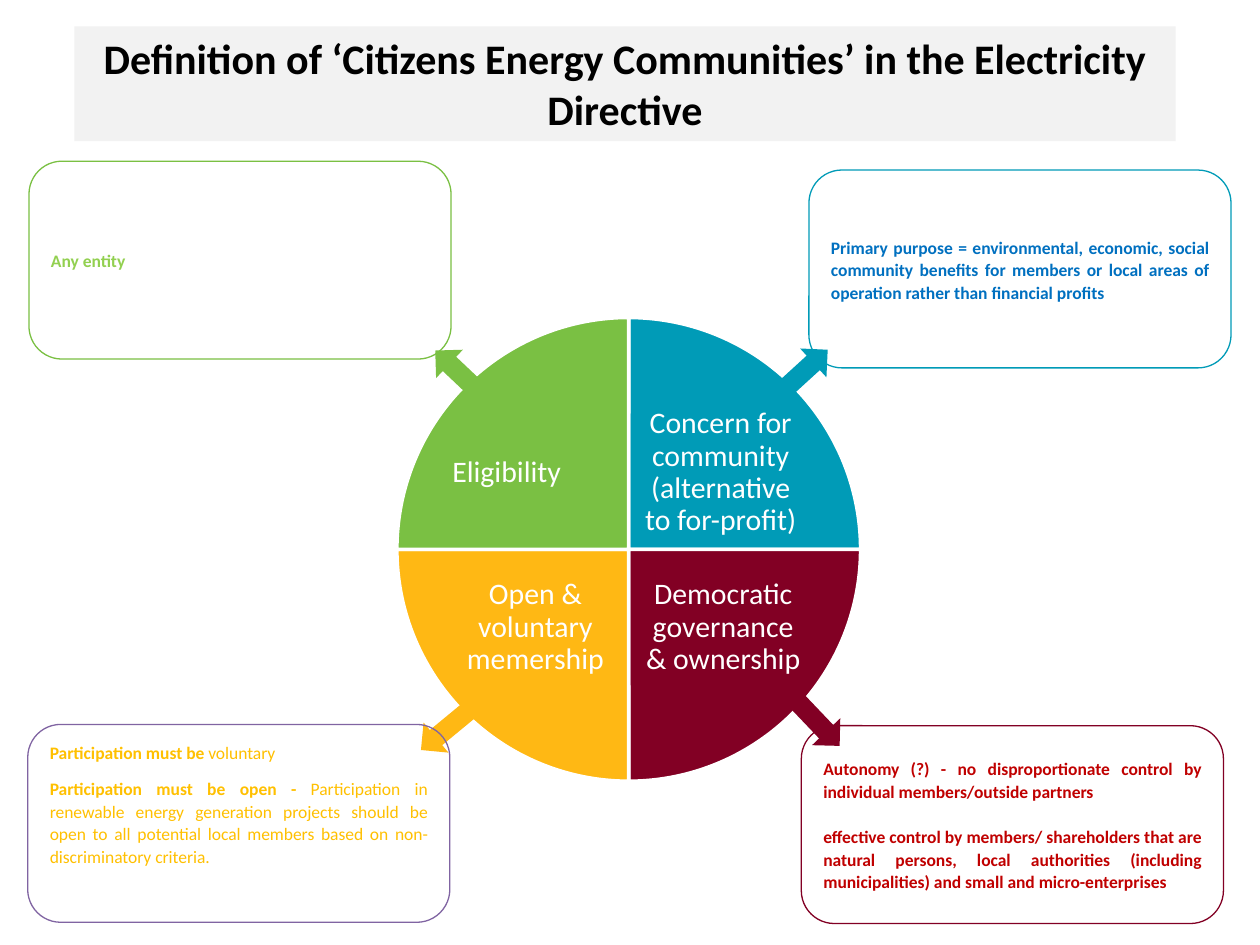
from collections import namedtuple

from pptx import Presentation
from pptx.dml.color import RGBColor
from pptx.enum.shapes import MSO_SHAPE
from pptx.enum.text import MSO_ANCHOR, MSO_AUTO_SIZE, PP_ALIGN
from pptx.util import Inches, Pt

LEFT, CENTER, JUSTIFY = PP_ALIGN.LEFT, PP_ALIGN.CENTER, PP_ALIGN.JUSTIFY
TOP, MIDDLE = MSO_ANCHOR.TOP, MSO_ANCHOR.MIDDLE
PIE, ARROW, ROUNDED = MSO_SHAPE.PIE, MSO_SHAPE.RIGHT_ARROW, MSO_SHAPE.ROUNDED_RECTANGLE
FIXED_SIZE = MSO_AUTO_SIZE.NONE

FONT = "Calibri"
BLACK = RGBColor(0x00, 0x00, 0x00)
WHITE = RGBColor(0xFF, 0xFF, 0xFF)
PALE_GREY = RGBColor(0xF2, 0xF2, 0xF2)
GREEN = RGBColor(0x7A, 0xC0, 0x43)
TEAL = RGBColor(0x00, 0x9B, 0xB7)
AMBER = RGBColor(0xFF, 0xB8, 0x14)
MAROON = RGBColor(0x82, 0x00, 0x24)
PURPLE = RGBColor(0x80, 0x64, 0xA2)
LIME_TEXT = RGBColor(0x92, 0xD0, 0x50)
BLUE_TEXT = RGBColor(0x00, 0x70, 0xC0)
GOLD_TEXT = RGBColor(0xFF, 0xC0, 0x00)
RED_TEXT = RGBColor(0xC0, 0x00, 0x00)

Box = namedtuple("Box", "left top width height")

# Label, fill, start angle, label offset in the wheel, alignment
QUADRANTS = [
    ("Concern for community (alternative to for-profit)", TEAL, 270, (1.89, 0.68), CENTER),
    ("Democratic governance & ownership", MAROON, 0, (1.91, 1.91), CENTER),
    ("Open & voluntary memership", AMBER, 90, (0.42, 1.91), CENTER),
    ("Eligibility", GREEN, 180, (0.42, 0.68), LEFT),
]

# Arrow offset in the wheel, rotation, fill
ARROWS = [
    ((0.22, 0.32), 223.4, GREEN),
    ((2.88, 0.31), 317.6, TEAL),
    ((0.12, 3.08), 140.5, AMBER),
    ((2.99, 3.02), 46.4, MAROON),
]

# Position, outline, text colour, anchor, gap between paragraphs, paragraphs of (text, bold)
CRITERIA = [
    ((0.23, 1.28), GREEN, LIME_TEXT, MIDDLE, 0, [[("Any entity", True)]]),
    ((6.42, 1.35), TEAL, BLUE_TEXT, MIDDLE, 0, [
        [("Primary purpose = environmental, economic, social community benefits for "
          "members or local areas of operation rather than financial profits", True)],
    ]),
    ((0.22, 5.75), PURPLE, GOLD_TEXT, TOP, 8, [
        [("Participation must be ", True), ("voluntary", False)],
        [("Participation must be open - ", True),
         ("Participation in renewable energy generation projects should be open to all "
          "potential local members based on non-discriminatory criteria.", False)],
    ]),
    ((6.36, 5.76), MAROON, RED_TEXT, MIDDLE, 13, [
        [("Autonomy (?) - no disproportionate control by individual members/outside "
          "partners", True)],
        [("effective control by members/ shareholders that are natural persons, local "
          "authorities (including municipalities) and small and micro-enterprises", True)],
    ]),
]


def place(shape, box):
    shape.left, shape.top, shape.width, shape.height = (Inches(side) for side in box)


def add_figure(slide, kind, box, fill=None, line=None, line_width=0.75):
    figure = slide.shapes.add_shape(kind, *(Inches(side) for side in box))
    figure.shadow.inherit = False
    if fill is None:
        figure.fill.background()
    else:
        figure.fill.solid()
        figure.fill.fore_color.rgb = fill
    if line is None:
        figure.line.fill.background()
    else:
        figure.line.color.rgb = line
        figure.line.width = Pt(line_width)
    return figure


def write(shape, paragraphs, *, size, color, align=CENTER, anchor=MIDDLE,
          spacing=1.0, gap=0, inset=None):
    """Fill a shape with paragraphs, each a list of (text, bold) runs."""
    frame = shape.text_frame
    frame.word_wrap = True
    frame.auto_size = FIXED_SIZE
    frame.vertical_anchor = anchor
    if inset is not None:
        frame.margin_left = frame.margin_right = Inches(inset)
        frame.margin_top = frame.margin_bottom = Inches(inset)
    for index, runs in enumerate(paragraphs):
        paragraph = frame.add_paragraph() if index else frame.paragraphs[0]
        paragraph.alignment = align
        paragraph.line_spacing = spacing
        if index:
            paragraph.space_before = Pt(gap)
        for text, bold in runs:
            run = paragraph.add_run()
            run.text = text
            run.font.name = FONT
            run.font.size = Pt(size)
            run.font.bold = bold
            run.font.color.rgb = color


def add_title(slide, box):
    title = slide.shapes.title
    place(title, box)
    title.fill.solid()
    title.fill.fore_color.rgb = PALE_GREY
    heading = "Definition of ‘Citizens Energy Communities’ in the Electricity Directive"
    write(title, [[(heading, True)]], size=24, color=BLACK, anchor=TOP)


def add_wheel(slide, box):
    for label, fill, start, (dx, dy), align in QUADRANTS:
        quadrant = add_figure(slide, PIE, box, fill, WHITE, 2)
        # Pie angles count 0.6 per degree in adjustment units
        quadrant.adjustments[0] = start * 0.6
        quadrant.adjustments[1] = (start + 90) % 360 * 0.6
        caption = slide.shapes.add_textbox(
            Inches(box.left + dx), Inches(box.top + dy), Inches(1.36), Inches(1.1))
        write(caption, [[(label, False)]], size=17, color=WHITE, align=align,
              spacing=0.9, inset=0.02)
    for (dx, dy), rotation, fill in ARROWS:
        arrow = add_figure(slide, ARROW, Box(box.left + dx, box.top + dy, 0.62, 0.31), fill)
        arrow.rotation = rotation


def add_criterion(slide, box, outline, color, anchor, gap, paragraphs):
    card = add_figure(slide, ROUNDED, box, line=outline)
    write(card, paragraphs, size=10, color=color, align=JUSTIFY, anchor=anchor,
          spacing=1.07, gap=gap)


def main():
    deck = Presentation()
    deck.slide_width, deck.slide_height = Inches(10), Inches(7.5)
    slide = deck.slides.add_slide(deck.slide_layouts.get_by_name("Title Only"))
    add_wheel(slide, Box(3.15, 2.52, 3.68, 3.68))
    add_title(slide, Box(0.59, 0.21, 8.74, 0.91))
    for position, *content in CRITERIA:
        add_criterion(slide, Box(*position, 3.35, 1.57), *content)
    deck.save("out.pptx")


if __name__ == "__main__":
    main()
